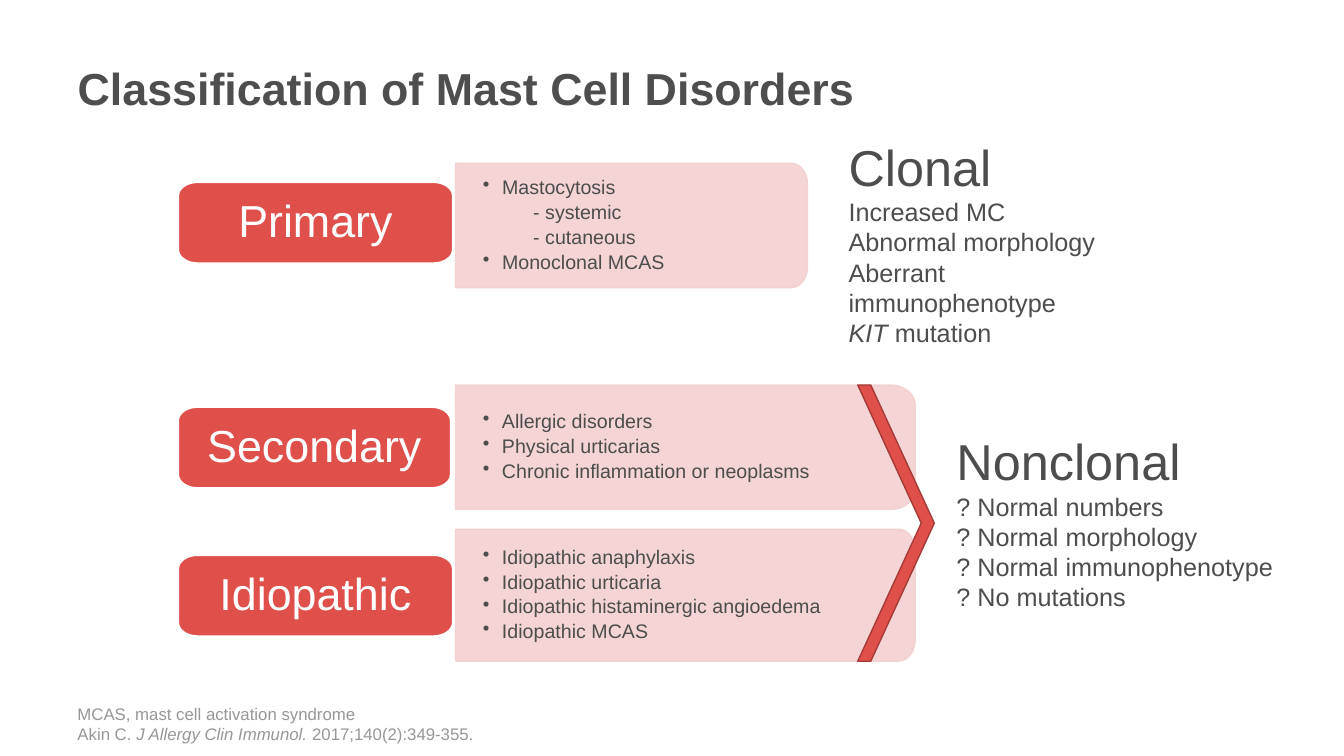
from dataclasses import dataclass
from math import cos, pi, sin
from typing import Any

from lxml.etree import SubElement
from pptx import Presentation
from pptx.dml.color import RGBColor
from pptx.enum.shapes import MSO_SHAPE
from pptx.enum.text import MSO_ANCHOR, PP_ALIGN
from pptx.oxml.ns import qn
from pptx.util import Inches, Pt

# Grid of 160 columns by 90 rows of square cells
COLUMNS, ROWS = 160, 90
CELL = Inches(1 / 12)
CORNER_STEPS = 8

WHITE = RGBColor(0xFF, 0xFF, 0xFF)
RED = RGBColor(0xDF, 0x50, 0x4B)
DARK_RED = RGBColor(0xA5, 0x3B, 0x37)
PINK = RGBColor(0xF3, 0xD0, 0xD0)
TITLE_GREY = RGBColor(0x4D, 0x4E, 0x4D)
TEXT_GREY = RGBColor(0x4D, 0x4D, 0x4D)
NOTE_GREY = RGBColor(0x97, 0x97, 0x97)


@dataclass(frozen=True)
class Area:
    """Position and size in grid cells."""
    left: float
    top: float
    width: float
    height: float

    def lengths(self) -> tuple[int, ...]:
        return tuple(cells(n) for n in (self.left, self.top, self.width, self.height))


@dataclass(frozen=True)
class Category:
    name: str
    label: Area
    panel: Area
    corner: tuple[float, float]
    items: tuple[str, ...]


@dataclass(frozen=True)
class TextPart:
    text: str
    size: int
    italic: bool = False


@dataclass(frozen=True)
class TextBlock:
    area: Area
    color: RGBColor
    anchor: MSO_ANCHOR
    lines: tuple[tuple[TextPart, ...], ...]


CATEGORIES = (
    Category("Primary", Area(21.24, 21.72, 32.64, 9.6), Area(54.24, 19.44, 41.88, 14.8),
             (1.92, 2.4),
             ("Mastocytosis", "- systemic", "- cutaneous", "Monoclonal MCAS")),
    Category("Secondary", Area(21.24, 48.48, 32.4, 9.6), Area(54.24, 45.84, 54.72, 14.8),
             (2.88, 2.4),
             ("Allergic disorders", "Physical urticarias",
              "Chronic inflammation or neoplasms")),
    Category("Idiopathic", Area(21.24, 66.12, 32.64, 9.6), Area(54.24, 63, 54.72, 15.7),
             (1.92, 2.6),
             ("Idiopathic anaphylaxis", "Idiopathic urticaria",
              "Idiopathic histaminergic angioedema", "Idiopathic MCAS")),
)
LABEL_CORNER = (2.28, 1.6)
TITLE_AREA = Area(8.04, 2.64, 141, 15.6)
CHEVRON_AREA = Area(102.12, 45.84, 9.12, 32.88)

TEXT_BLOCKS = (
    TextBlock(Area(99.84, 15.6, 37.8, 23.04), TEXT_GREY, MSO_ANCHOR.TOP, (
        (TextPart("Clonal", 36),),
        (TextPart("Increased MC", 18),),
        (TextPart("Abnormal morphology", 18),),
        (TextPart("Aberrant immunophenotype", 18),),
        (TextPart("KIT", 18, True), TextPart(" mutation", 18)))),
    TextBlock(Area(112.68, 50.64, 46.44, 26.64), TEXT_GREY, MSO_ANCHOR.TOP, (
        (TextPart("Nonclonal", 36),),
        (TextPart("? Normal numbers", 18),),
        (TextPart("? Normal morphology", 18),),
        (TextPart("? Normal immunophenotype", 18),),
        (TextPart("? No mutations", 18),))),
    TextBlock(Area(8.04, 83.4, 141, 5.76), NOTE_GREY, MSO_ANCHOR.BOTTOM, (
        (TextPart("MCAS, mast cell activation syndrome", 12),),
        (TextPart("Akin C. ", 12), TextPart("J Allergy Clin Immunol. ", 12, True),
         TextPart("2017;140(2):349-355.", 12)))),
)


def cells(count: float) -> int:
    return round(count * CELL)


def apply_format(target: Any, values: dict[str, Any]) -> None:
    for name, value in values.items():
        setattr(target, name, value)


def add_run(paragraph: Any, text: str, color: RGBColor, **font_values: Any) -> None:
    run = paragraph.add_run()
    run.text = text
    apply_format(run.font, {"name": "Arial", **font_values})
    run.font.color.rgb = color


def paint(shape: Any, fill: RGBColor, line: RGBColor) -> None:
    shape.shadow.inherit = False
    shape.fill.solid()
    shape.fill.fore_color.rgb = fill
    shape.line.color.rgb = line
    shape.line.width = Pt(1)


def add_rounded_box(slide: Any, area: Area, corner: tuple[float, float],
                    round_left: bool) -> Any:
    """Draw a box with elliptical right corners, and left ones on request."""
    radius_x, radius_y = corner
    right, bottom = area.left + area.width, area.top + area.height
    points = []
    # Clockwise from the top right; each corner sweeps a quarter turn
    for index, (x, y, side_x, side_y) in enumerate((
            (right, area.top, -1, 1), (right, bottom, -1, -1),
            (area.left, bottom, 1, -1), (area.left, area.top, 1, 1))):
        if side_x == 1 and not round_left:
            points.append((cells(x), cells(y)))
            continue
        for step in range(CORNER_STEPS + 1):
            angle = (index - 1 + step / CORNER_STEPS) * pi / 2
            points.append((cells(x + radius_x * (side_x + cos(angle))),
                           cells(y + radius_y * (side_y + sin(angle)))))
    builder = slide.shapes.build_freeform(*points[0])
    builder.add_line_segments(points[1:], close=True)
    return builder.convert_to_shape()


def set_frame(shape: Any, anchor: MSO_ANCHOR, side: float, edge: float) -> Any:
    frame = shape.text_frame
    apply_format(frame, {"word_wrap": True, "vertical_anchor": anchor,
                         "margin_left": Inches(side), "margin_right": Inches(side),
                         "margin_top": Inches(edge), "margin_bottom": Inches(edge)})
    return frame


def add_panel(slide: Any, category: Category) -> None:
    panel = add_rounded_box(slide, category.panel, category.corner, round_left=False)
    paint(panel, PINK, PINK)
    for color in panel._element.spPr.iter(qn("a:srgbClr")):
        SubElement(color, qn("a:alpha"), val="90000")
    frame = set_frame(panel, MSO_ANCHOR.MIDDLE, 0.27, 0.2)
    for index, item in enumerate(category.items):
        paragraph = frame.add_paragraph() if index else frame.paragraphs[0]
        nested = item.startswith("-")
        apply_format(paragraph, {"alignment": PP_ALIGN.LEFT, "level": 2 if nested else 1,
                                 "line_spacing": 0.9, "space_after": Pt(2.6)})
        properties = paragraph._p.get_or_add_pPr()
        properties.set("marL", str(Inches(0.5 if nested else 0.19)))
        properties.set("indent", str(0 if nested else Inches(-0.19)))
        if nested:
            SubElement(properties, qn("a:buNone"))
        else:
            SubElement(properties, qn("a:buChar"), char="•")
        add_run(paragraph, item, TEXT_GREY, size=Pt(14))


def add_label(slide: Any, category: Category) -> None:
    label = add_rounded_box(slide, category.label, LABEL_CORNER, round_left=True)
    paint(label, RED, WHITE)
    paragraph = set_frame(label, MSO_ANCHOR.MIDDLE, 0.22, 0.14).paragraphs[0]
    apply_format(paragraph, {"alignment": PP_ALIGN.CENTER, "line_spacing": 0.9})
    add_run(paragraph, category.name, WHITE, size=Pt(32))


def add_text_block(slide: Any, block: TextBlock) -> None:
    box = slide.shapes.add_textbox(*block.area.lengths())
    frame = set_frame(box, block.anchor, 0.1, 0.05)
    for index, line in enumerate(block.lines):
        paragraph = frame.add_paragraph() if index else frame.paragraphs[0]
        for part in line:
            add_run(paragraph, part.text, block.color,
                    size=Pt(part.size), italic=part.italic)


def add_title(slide: Any) -> None:
    title = slide.shapes.title
    apply_format(title, dict(zip(("left", "top", "width", "height"), TITLE_AREA.lengths())))
    paragraph = set_frame(title, MSO_ANCHOR.MIDDLE, 0.1, 0.05).paragraphs[0]
    paragraph.alignment = PP_ALIGN.LEFT
    add_run(paragraph, "Classification of Mast Cell Disorders", TITLE_GREY,
            size=Pt(32), bold=True)


def main() -> None:
    presentation = Presentation()
    apply_format(presentation, {"slide_width": COLUMNS * CELL, "slide_height": ROWS * CELL})
    slide = presentation.slides.add_slide(presentation.slide_layouts[5])
    add_title(slide)
    # Category labels with their detail panels
    for category in CATEGORIES:
        add_panel(slide, category)
        add_label(slide, category)
    # Clonal and nonclonal features, footnote
    for block in TEXT_BLOCKS:
        add_text_block(slide, block)
    # Chevron joining the nonclonal categories
    chevron = slide.shapes.add_shape(MSO_SHAPE.CHEVRON, *CHEVRON_AREA.lengths())
    chevron.adjustments[0] = 0.83
    paint(chevron, RED, DARK_RED)
    presentation.save("out.pptx")


if __name__ == "__main__":
    main()
